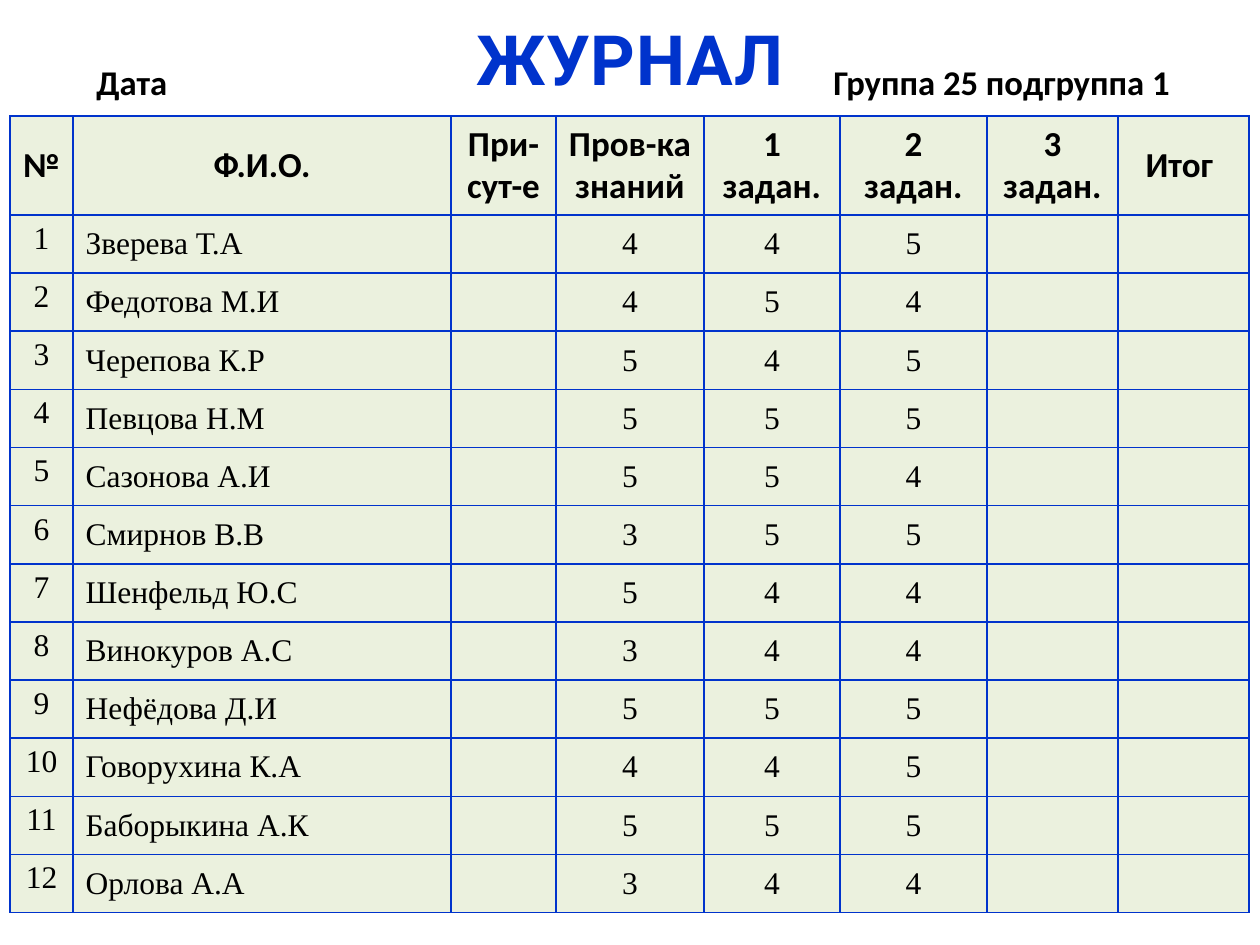
import dataclasses

import lxml.etree
import pptx
import pptx.dml.color
import pptx.enum.text
import pptx.oxml.ns
import pptx.util

EMU_PER_PX = 914400 / 126
ALIGN = pptx.enum.text.PP_ALIGN
ANCHOR = pptx.enum.text.MSO_ANCHOR


@dataclasses.dataclass(frozen=True)
class Theme:
    blue: str = "0033CC"
    black: str = "000000"
    cell: str = "EBF1DE"
    title_font: str = "Roboto"
    heading_font: str = "Calibri"
    body_font: str = "Times New Roman"
    title_size: float = 39.6
    caption_size: float = 19.8
    heading_size: float = 20
    body_size: float = 18
    border_width: float = 1


THEME = Theme()

COLUMN_WIDTHS = [63, 378, 105, 148, 136, 147, 131, 131]
HEADER_HEIGHT = 99
HEADINGS = ["№", "Ф.И.О.", "При-сут-е", "Пров-ка знаний",
            "1 задан.", "2 задан.", "3 задан.", "Итог "]
STUDENTS = [
    ("Зверева Т.А", "445"),
    ("Федотова М.И", "454"),
    ("Черепова К.Р", "545"),
    ("Певцова Н.М", "555"),
    ("Сазонова А.И", "554"),
    ("Смирнов В.В", "355"),
    ("Шенфельд Ю.С", "544"),
    ("Винокуров А.С", "344"),
    ("Нефёдова Д.И", "555"),
    ("Говорухина К.А", "445"),
    ("Баборыкина А.К", "555"),
    ("Орлова А.А", "344"),
]


def px(length):
    return pptx.util.Emu(round(length * EMU_PER_PX))


def rgb(value):
    return pptx.dml.color.RGBColor.from_string(value)


def add_element(parent, tag, **attributes):
    return lxml.etree.SubElement(parent, pptx.oxml.ns.qn(tag), **attributes)


def add_run(paragraph, text, font, size, color, bold):
    run = paragraph.add_run()
    run.text = text
    run.font.name = font
    run.font.size = pptx.util.Pt(size)
    run.font.color.rgb = rgb(color)
    run.font.bold = bold
    return run


def place_title(slide, box):
    title = slide.shapes.title
    title.left, title.top, title.width, title.height = map(px, box)
    frame = title.text_frame
    frame.auto_size = pptx.enum.text.MSO_AUTO_SIZE.NONE
    frame.vertical_anchor = ANCHOR.MIDDLE
    paragraph = frame.paragraphs[0]
    paragraph.alignment = ALIGN.CENTER
    run = add_run(paragraph, "ЖУРНАЛ", THEME.title_font, THEME.title_size, THEME.blue, True)
    run.font._element.set("spc", "50")


def style_cell(cell):
    properties = cell._tc.get_or_add_tcPr()
    for side in ("a:lnL", "a:lnR", "a:lnT", "a:lnB"):
        line = add_element(properties, side, w=str(pptx.util.Pt(THEME.border_width)))
        add_element(add_element(line, "a:solidFill"), "a:srgbClr", val=THEME.blue)
    cell.fill.solid()
    cell.fill.fore_color.rgb = rgb(THEME.cell)
    cell.vertical_anchor = ANCHOR.MIDDLE


def fill_cell(cell, text, heading, alignment):
    style_cell(cell)
    if not text:
        return
    paragraph = cell.text_frame.paragraphs[0]
    paragraph.alignment = alignment
    font, size = ((THEME.heading_font, THEME.heading_size) if heading
                  else (THEME.body_font, THEME.body_size))
    add_run(paragraph, text, font, size, THEME.black, heading)


def indent_number(cell):
    cell.vertical_anchor = ANCHOR.TOP
    indent = pptx.util.Inches(0.25)
    properties = cell.text_frame.paragraphs[0]._p.get_or_add_pPr()
    properties.set("marL", str(indent))
    properties.set("indent", str(-indent))


def place_journal(slide, box):
    rows = [HEADINGS] + [
        [str(number), name, "", *marks, "", ""]
        for number, (name, marks) in enumerate(STUDENTS, start=1)
    ]
    table = slide.shapes.add_table(len(rows), len(HEADINGS), *map(px, box)).table
    table.first_row = False
    table.horz_banding = False
    for column, width in zip(table.columns, COLUMN_WIDTHS):
        column.width = px(width)
    student_height = (box[3] - HEADER_HEIGHT) / len(STUDENTS)
    for row_index, texts in enumerate(rows):
        heading = row_index == 0
        table.rows[row_index].height = px(HEADER_HEIGHT if heading else student_height)
        for column_index, text in enumerate(texts):
            is_name = column_index == 1 and not heading
            cell = table.cell(row_index, column_index)
            fill_cell(cell, text, heading, ALIGN.LEFT if is_name else ALIGN.CENTER)
        if not heading:
            indent_number(table.cell(row_index, 0))


def place_caption(slide, box):
    frame = slide.shapes.add_textbox(*map(px, box)).text_frame
    frame.word_wrap = True
    frame.vertical_anchor = ANCHOR.MIDDLE
    paragraph = frame.paragraphs[0]
    paragraph.line_spacing = 0.9
    tabs = add_element(paragraph._p.get_or_add_pPr(), "a:tabLst")
    add_element(tabs, "a:tab", pos=str(px(737)), algn="l")
    for text in ("Дата", "\t", "Группа 25 подгруппа 1"):
        add_run(paragraph, text, THEME.heading_font, THEME.caption_size, THEME.black, True)


def main():
    presentation = pptx.Presentation()
    presentation.slide_width = px(1260)
    presentation.slide_height = px(945)
    slide = presentation.slides.add_slide(presentation.slide_layouts[5])
    place_title(slide, (63, 31, 1134, 53))
    place_journal(slide, (10, 116, 1239, 797))
    place_caption(slide, (84, 53, 1134, 63))
    presentation.save("out.pptx")


if __name__ == "__main__":
    main()
